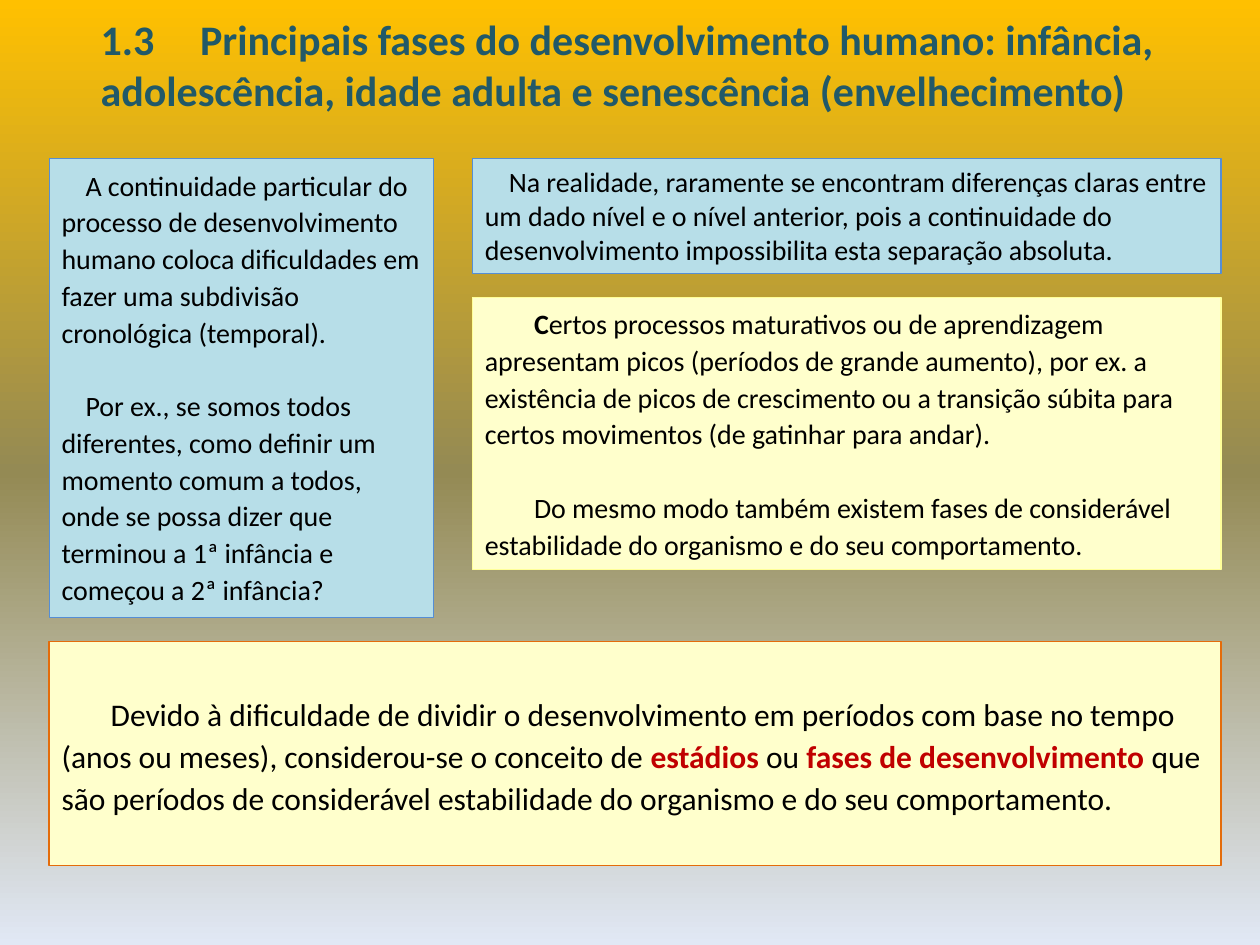
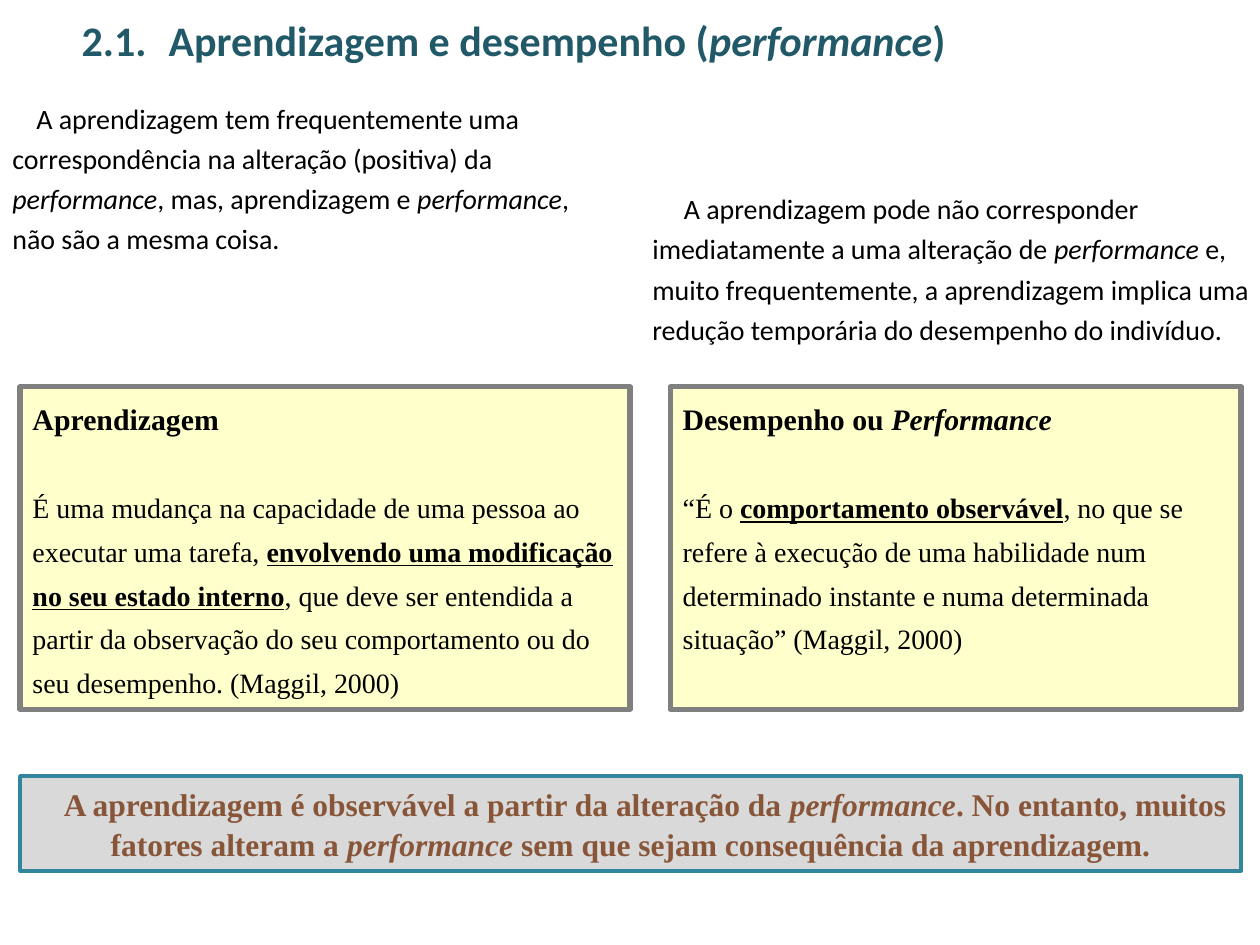
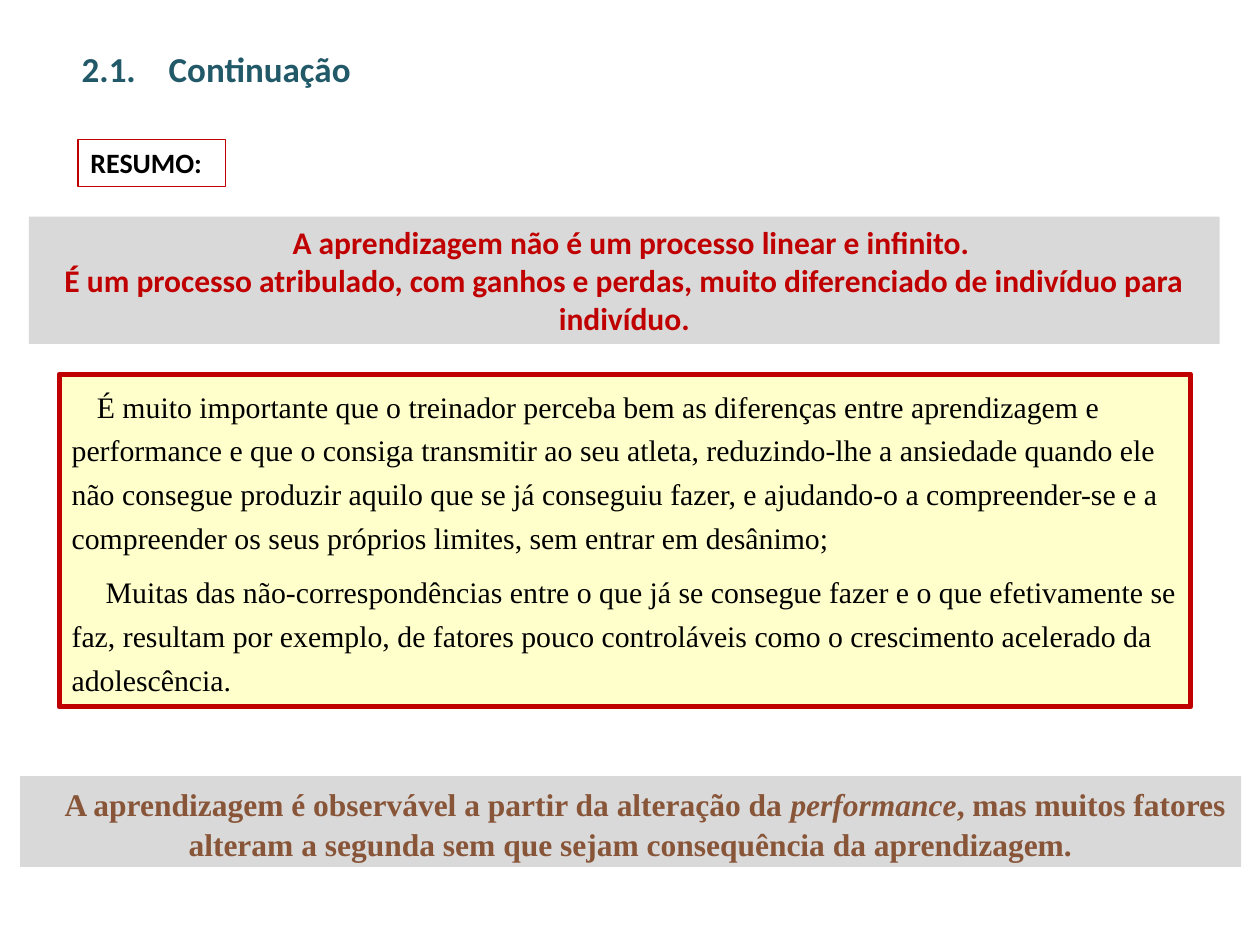
from collections import namedtuple
from copy import deepcopy

from pptx import Presentation
from pptx import util as u
from pptx.dml import color
from pptx.enum import shapes, text
from pptx.oxml import ns

Box = namedtuple("Box", "left top width height")
Style = namedtuple("Style", "font size color bold spacing", defaults=("000000", False, None))

BLUE, CREAM, GREY = "B7DEE8", "FFFFCC", "D9D9D9"
RED, TEAL, BROWN = "C00000", "215968", "885538"
SANS, SERIF = "Calibri", "Times New Roman"
BODY = Style(SANS, 16)
SPACED = BODY._replace(spacing=21)
OPEN = BODY._replace(spacing=23)
CONCEPT = Style(SANS, 18, spacing=24)
DEFINITION = Style(SERIF, 16, spacing=25)
TERM = Style(SERIF, 17, bold=True, spacing=25)
ADVICE = Style(SERIF, 17, spacing=25)
CONCLUSION = Style(SERIF, 18, BROWN, True, 23)
SUMMARY = Style(SANS, 18, RED, True)


def rgb(value):
    """Turn a hex string into a colour."""
    return color.RGBColor.from_string(value)


def place(box):
    """Return the lengths of a box given in inches."""
    return [u.Inches(value) for value in box]


def add_paragraph(frame, style, runs, indent=0, before=0, align=None, tab=None):
    """Write one paragraph; each run is plain text or (text, changes)."""
    first = not frame.paragraphs[0].runs
    paragraph = frame.paragraphs[0] if first else frame.add_paragraph()
    properties = paragraph._p.get_or_add_pPr()
    if indent:
        properties.set("indent", str(u.Inches(indent)))
    if tab:
        tabs = properties.makeelement(ns.qn("a:tabLst"), {})
        stop = tabs.makeelement(ns.qn("a:tab"), {"pos": str(u.Inches(tab)), "algn": "l"})
        tabs.append(stop)
        properties.append(tabs)
    paragraph.alignment = align or text.PP_ALIGN.LEFT
    if style.spacing:
        paragraph.line_spacing = u.Pt(style.spacing)
    if before:
        paragraph.space_before = u.Pt(before)
    for item in runs:
        words, changes = (item, {}) if isinstance(item, str) else item
        run = paragraph.add_run()
        run.text = words
        run.font.name = style.font
        run.font.size = u.Pt(style.size)
        run.font.bold = changes.get("bold", style.bold)
        run.font.italic = changes.get("italic", False)
        run.font.underline = changes.get("underline", False)
        run.font.color.rgb = rgb(changes.get("color", style.color))


def italic(words):
    """Return an italic run."""
    return words, {"italic": True}


def underlined(words):
    """Return a bold underlined run."""
    return words, {"bold": True, "underline": True}


def highlighted(words):
    """Return a bold red run."""
    return words, {"bold": True, "color": RED}


def add_text(slide, box, anchor=text.MSO_ANCHOR.TOP):
    """Add a wrapping text box and return its frame."""
    frame = slide.shapes.add_textbox(*place(box)).text_frame
    frame.word_wrap = True
    frame.vertical_anchor = anchor
    return frame


def add_panel(slide, box, fill=None, line=None, width=0.75, anchor=text.MSO_ANCHOR.TOP):
    """Add a rectangle and return its text frame."""
    panel = slide.shapes.add_shape(shapes.MSO_SHAPE.RECTANGLE, *place(box))
    panel.shadow.inherit = False
    if fill:
        panel.fill.solid()
        panel.fill.fore_color.rgb = rgb(fill)
    else:
        panel.fill.background()
    if line:
        panel.line.color.rgb = rgb(line)
        panel.line.width = u.Pt(width)
    else:
        panel.line.fill.background()
    frame = panel.text_frame
    frame.word_wrap = True
    frame.vertical_anchor = anchor
    return frame


def add_title(slide, box, number, runs, tab, size=24):
    """Write the numbered title of a slide."""
    frame = add_text(slide, box, text.MSO_ANCHOR.MIDDLE)
    add_paragraph(frame, Style(SANS, size, TEAL, True), [number + "\t", *runs], tab=tab)


def add_conclusion(slide, box, runs, line=None):
    """Add the closing grey band."""
    frame = add_panel(slide, box, GREY, line, 2.25)
    add_paragraph(frame, CONCLUSION, runs, indent=0.23, align=text.PP_ALIGN.CENTER)


def add_definition(slide, box, term, runs):
    """Add a framed term with its definition."""
    frame = add_panel(slide, box, CREAM, "808080", 3)
    add_paragraph(frame, TERM, term)
    add_paragraph(frame, DEFINITION, runs, before=DEFINITION.spacing)


def paint_gradient(slide, colors):
    """Fill the background from top to bottom with evenly spaced colours."""
    fill = slide.background.fill
    fill.gradient()
    fill.gradient_angle = 270
    stops = next(slide.element.iter(ns.qn("a:gsLst")))
    while len(stops) < len(colors):
        stops.append(deepcopy(stops[0]))
    for index, (stop, value) in enumerate(zip(fill.gradient_stops, colors)):
        stop.position = index / (len(colors) - 1)
        stop.color.rgb = rgb(value)


def build_phases(slide, box):
    """Build the slide on the phases of human development."""
    paint_gradient(slide, ["FFC000", "948A54", "E1E8F5"])
    add_title(slide, Box(0.7, 0.16, 9.3, 0.7), "1.3", [
        "Principais fases do desenvolvimento humano: infância, "
        "adolescência, idade adulta e senescência (envelhecimento)"], tab=0.79)

    left_width, gutter = 3.05, 0.31
    right = box.left + left_width + gutter
    right_width = box.width - left_width - gutter

    frame = add_panel(slide, Box(right, box.top, right_width, 0.91), BLUE, "558ED5")
    add_paragraph(frame, BODY, [
        "Na realidade, raramente se encontram diferenças claras entre um dado nível e o nível "
        "anterior, pois a continuidade do desenvolvimento impossibilita esta separação "
        "absoluta."], indent=0.19)

    frame = add_panel(slide, Box(box.left, box.top, left_width, 3.64), BLUE, "558ED5")
    add_paragraph(frame, SPACED, [
        "A continuidade particular do processo de desenvolvimento humano coloca dificuldades "
        "em fazer uma subdivisão cronológica (temporal)."], indent=0.19)
    add_paragraph(frame, SPACED, [
        "Por ex., se somos todos diferentes, como definir um momento comum a todos, onde se "
        "possa dizer que terminou a 1ª infância e começou a 2ª infância?"],
        indent=0.19, before=SPACED.spacing)

    frame = add_panel(slide, Box(right, box.top + 1.1, right_width, 2.16), CREAM, "FFFF99")
    add_paragraph(frame, SPACED, [
        ("C", {"bold": True}),
        "ertos processos maturativos ou de aprendizagem apresentam picos (períodos de grande "
        "aumento), por ex. a existência de picos de crescimento ou a transição súbita para "
        "certos movimentos (de gatinhar para andar)."], indent=0.39)
    add_paragraph(frame, SPACED, [
        "Do mesmo modo também existem fases de considerável estabilidade do organismo e do "
        "seu comportamento."], indent=0.39, before=SPACED.spacing)

    height = 1.78
    bottom = Box(box.left, box.top + box.height - height, box.width, height)
    frame = add_panel(slide, bottom, CREAM, "E46C0A", anchor=text.MSO_ANCHOR.MIDDLE)
    add_paragraph(frame, CONCEPT, [
        "Devido à dificuldade de dividir o desenvolvimento em períodos com base no tempo "
        "(anos ou meses), considerou-se o conceito de ",
        highlighted("estádios "), "ou ", highlighted("fases de desenvolvimento "),
        "que são períodos de considerável estabilidade do organismo e do seu comportamento."],
        indent=0.39)


def build_performance(slide, box):
    """Build the slide that sets learning against performance."""
    add_title(slide, Box(0.55, 0, 9.45, 0.63), "2.1.", [
        "Aprendizagem e desempenho (", italic("performance"), ")"], tab=0.69)

    frame = add_text(slide, Box(0, box.top, 4.69, 1.39))
    add_paragraph(frame, OPEN, [
        "A aprendizagem tem frequentemente uma correspondência na alteração (positiva) da ",
        italic("performance"), ", mas, aprendizagem e ", italic("performance"),
        ", não são a mesma coisa."], indent=0.19)

    frame = add_text(slide, Box(5.08, box.top + 0.72, 5.16, 1.39))
    add_paragraph(frame, OPEN, [
        "A aprendizagem pode não corresponder imediatamente a uma alteração de ",
        italic("performance"),
        " e, muito frequentemente, a aprendizagem implica uma redução temporária do "
        "desempenho do indivíduo."], indent=0.25)

    top, height, left_width, right_width = box.top + 2.37, 2.56, 4.84, 4.53
    add_definition(slide, Box(box.left, top, left_width, height), ["Aprendizagem"], [
        "É uma mudança na capacidade de uma pessoa ao executar uma tarefa, ",
        underlined("envolvendo uma modificação no seu estado interno"),
        ", que deve ser entendida a partir da observação do seu comportamento ou do seu "
        "desempenho. (Maggil, 2000)"])
    right = box.left + box.width - right_width
    add_definition(slide, Box(right, top, right_width, height),
                   ["Desempenho ou", italic(" Performance")], [
        "“É o ", underlined("comportamento observável"),
        ", no que se refere à execução de uma habilidade num determinado instante e numa "
        "determinada situação” (Maggil, 2000)"])

    add_conclusion(slide, Box(box.left, box.top + 5.46, box.width, 0.75), [
        "A aprendizagem é observável a partir da alteração da ", italic("performance"),
        ". No entanto, muitos fatores alteram a ", italic("performance "),
        "sem que sejam consequência da aprendizagem."], "31859C")


def build_summary(slide, box):
    """Build the summary slide."""
    add_title(slide, Box(0.55, 0.23, 9.45, 0.63), "2.1.", ["Continuação"], tab=0.69, size=20)

    frame = add_panel(slide, Box(0.62, box.top, 1.17, 0.37), line=RED)
    add_paragraph(frame, BODY._replace(bold=True), ["RESUMO:"])

    frame = add_panel(slide, Box(0.23, box.top + 0.61, 9.45, 1.01), GREY)
    center = text.PP_ALIGN.CENTER
    add_paragraph(frame, SUMMARY, [
        "A aprendizagem não é um processo linear e infinito."], indent=0.11, align=center)
    add_paragraph(frame, SUMMARY, [
        "É um processo atribulado, com ganhos e perdas, muito diferenciado de indivíduo para "
        "indivíduo."], align=center)

    frame = add_panel(slide, Box(0.47, box.top + 1.86, 8.98, 2.64), CREAM, RED, 3)
    add_paragraph(frame, ADVICE, [
        "É muito importante que o treinador perceba bem as diferenças entre aprendizagem e "
        "performance e que o consiga transmitir ao seu atleta, reduzindo-lhe a ansiedade "
        "quando ele não consegue produzir aquilo que se já conseguiu fazer, e ajudando-o a "
        "compreender-se e a compreender os seus próprios limites, sem entrar em desânimo;"],
        indent=0.2)
    add_paragraph(frame, ADVICE, [
        "Muitas das não-correspondências entre o que já se consegue fazer e o que "
        "efetivamente se faz, resultam por exemplo, de fatores pouco controláveis como o "
        "crescimento acelerado da adolescência."], indent=0.27, before=6)

    add_conclusion(slide, Box(box.left, box.top + 5.05, box.width, 0.72), [
        "A aprendizagem é observável a partir da alteração da ", italic("performance"),
        ", mas muitos fatores alteram a segunda sem que sejam consequência da aprendizagem."])


def main():
    """Build the presentation and save it."""
    presentation = Presentation()
    presentation.slide_width = u.Inches(10)
    presentation.slide_height = u.Inches(7.5)
    pages = [
        (build_phases, Box(0.39, 1.26, 9.3, 5.61)),
        (build_performance, Box(0.16, 0.7, 9.69, 6.21)),
        (build_summary, Box(0.16, 1.11, 9.69, 5.77)),
    ]
    for build, box in pages:
        build(presentation.slides.add_slide(presentation.slide_layouts[6]), box)
    presentation.save("out.pptx")


if __name__ == "__main__":
    main()
